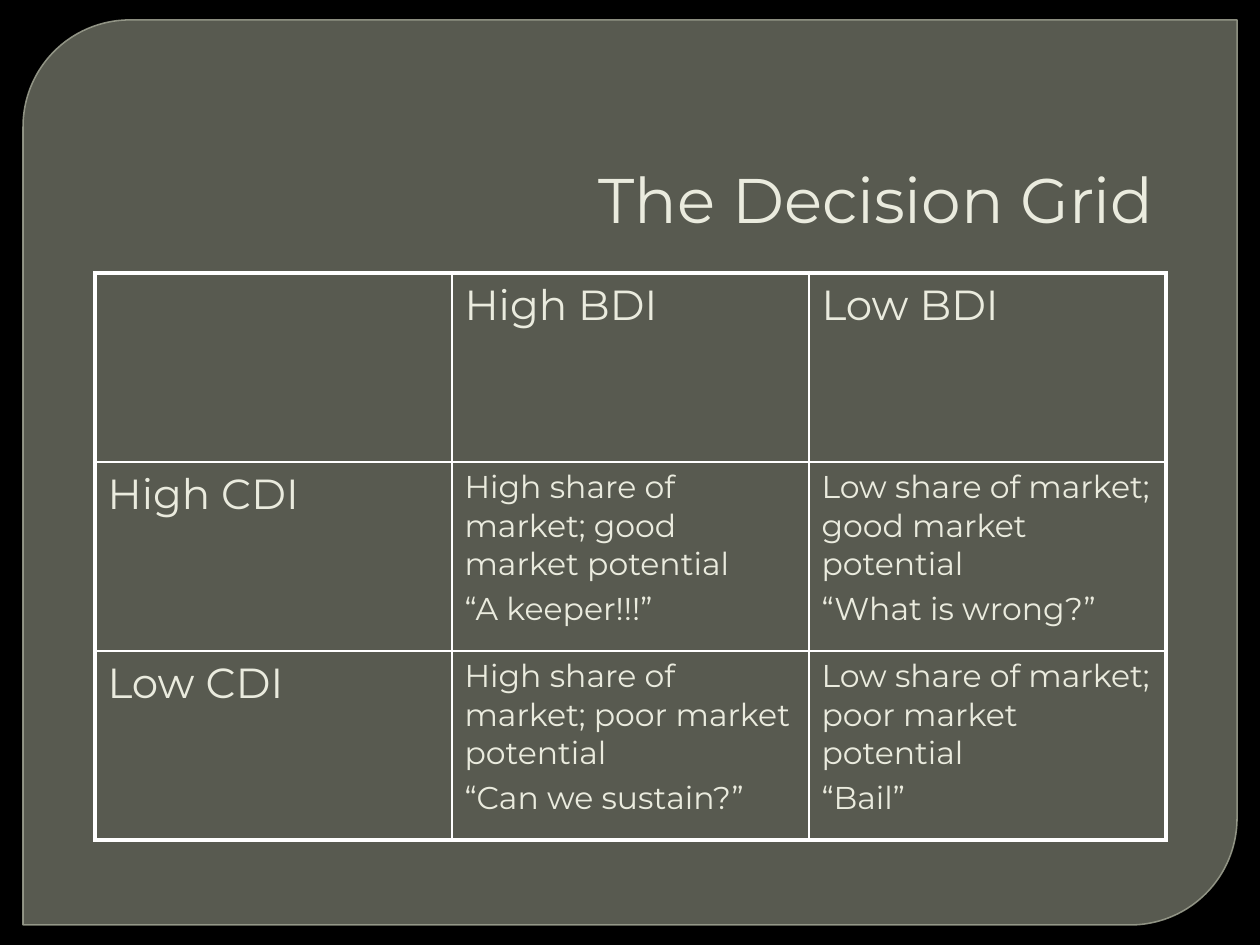
"""Build the decision grid slide."""
from dataclasses import dataclass

from lxml.etree import SubElement
from pptx import Presentation
from pptx.dml.color import RGBColor
from pptx.enum.shapes import MSO_SHAPE
from pptx.enum.text import MSO_ANCHOR, PP_ALIGN
from pptx.oxml import parse_xml
from pptx.oxml.ns import nsdecls, qn
from pptx.util import Emu, Pt

SCALE = 914400 / 126


def px(count):
    return Emu(round(count * SCALE))


@dataclass(frozen=True)
class Theme:
    font: str = "Montserrat"
    back: str = "000000"
    panel: str = "888B7B"
    edge: str = "9DA090"
    text: str = "EAEBDE"
    rule: str = "FFFFFF"
    title: int = 36
    head: int = 24
    body: int = 18
    gap: float = 3.6
    thick: float = 2.25
    thin: float = 1


class Painter:
    def __init__(self, slide, theme):
        self.slide = slide
        self.theme = theme
        fill = slide.background.fill
        fill.solid()
        fill.fore_color.rgb = RGBColor.from_string(theme.back)

    def tint(self, fill, color, alpha):
        fill.solid()
        fill.fore_color.rgb = RGBColor.from_string(color)
        node = fill._xPr.find(qn("a:solidFill"))[0]
        SubElement(node, qn("a:alpha"), val=str(alpha * 1000))

    def panel(self, left, top, width, height):
        shape = self.slide.shapes.add_shape(
            MSO_SHAPE.ROUND_2_DIAG_RECTANGLE, px(left), px(top), px(width), px(height))
        shape.adjustments[0] = 0.118
        shape.adjustments[1] = 0
        shape.shadow.inherit = False
        self.tint(shape.fill, self.theme.panel, 65)
        self.tint(shape.line.fill, self.theme.edge, 88)
        shape.line.width = Pt(0.87)

    def text(self, frame, lines, size, align=PP_ALIGN.LEFT):
        frame.word_wrap = True
        for i, line in enumerate(lines):
            para = frame.paragraphs[0] if i == 0 else frame.add_paragraph()
            para.text = line
            para.alignment = align
            if i:
                para.space_before = Pt(self.theme.gap)
            para.font.name = self.theme.font
            para.font.size = Pt(size)
            para.font.color.rgb = RGBColor.from_string(self.theme.text)

    def title(self, text, left, top, width, height):
        box = self.slide.shapes.add_textbox(px(left), px(top), px(width), px(height))
        box.text_frame.vertical_anchor = MSO_ANCHOR.BOTTOM
        self.text(box.text_frame, [text], self.theme.title, PP_ALIGN.RIGHT)

    def border(self, cell, outer):
        props = cell._tc.get_or_add_tcPr()
        for i, (side, thick) in enumerate(zip("LRTB", outer)):
            width = Pt(self.theme.thick if thick else self.theme.thin)
            props.insert(i, parse_xml(
                f'<a:ln{side} {nsdecls("a")} w="{width}"><a:solidFill>'
                f'<a:srgbClr val="{self.theme.rule}"/></a:solidFill></a:ln{side}>'))

    def table(self, rows, left, top, width, height):
        down, across = len(rows), len(rows[0])
        table = self.slide.shapes.add_table(
            down, across, px(left), px(top), px(width), px(height)).table
        table.first_row = table.horz_banding = False
        for r, row in enumerate(rows):
            for c, lines in enumerate(row):
                cell = table.cell(r, c)
                cell.fill.background()
                self.border(cell, (c == 0, c == across - 1, r == 0, r == down - 1))
                size = self.theme.body if r and c else self.theme.head
                self.text(cell.text_frame, lines, size)


def main():
    deck = Presentation()
    deck.slide_width, deck.slide_height = px(1260), px(945)
    slide = deck.slides.add_slide(deck.slide_layouts[6])
    paint = Painter(slide, Theme())
    paint.panel(23, 20, 1214, 905)
    paint.title("The Decision Grid", 95, 84, 1071, 158)
    paint.table([
        [[], ["High BDI"], ["Low BDI"]],
        [["High CDI"],
         ["High share of market; good market potential", "“A keeper!!!”"],
         ["Low share of market; good market potential", "“What is wrong?”"]],
        [["Low CDI"],
         ["High share of market; poor market potential", "“Can we sustain?”"],
         ["Low share of market; poor market potential", "“Bail”"]],
    ], 95, 273, 1071, 567)
    deck.save("out.pptx")


if __name__ == "__main__":
    main()
